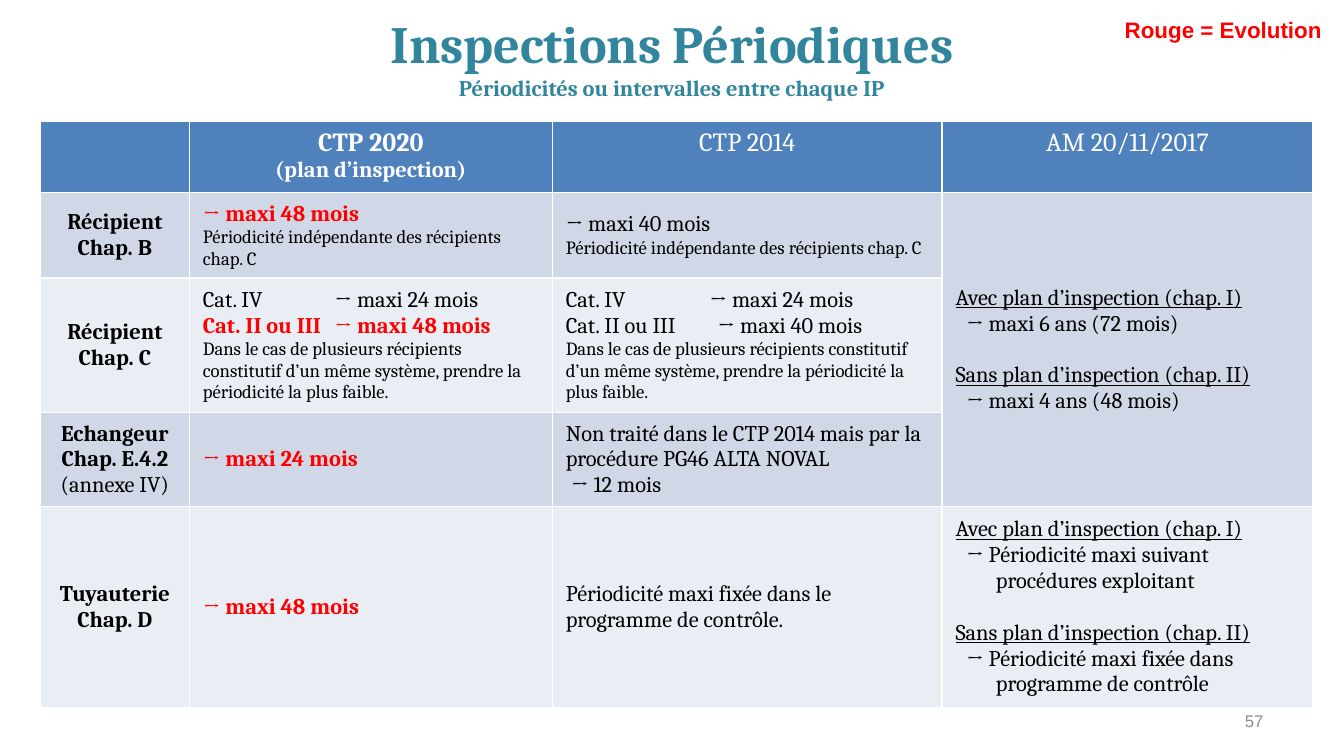
import pptx
import pptx.util
import pptx.dml.color
import pptx.enum.text
import pptx.oxml
import pptx.oxml.ns

Inches, Pt = pptx.util.Inches, pptx.util.Pt
ALIGN = pptx.enum.text.PP_ALIGN
ANCHOR = pptx.enum.text.MSO_ANCHOR

COLORS = {"teal": "31859C", "red": "FF0000", "black": "000000", "white": "FFFFFF",
          "gray": "8C8C8C", "header": "4F81BD", "dark band": "D0D8E8", "light band": "E9EDF4"}

# Each style: font values, colour, and optional paragraph values.
STYLES = {
    "title": dict(size=28, bold=True, color="teal"),
    "subtitle": dict(size=12, bold=True, color="teal"),
    "legend": dict(size=12, bold=True, color="red", name="Arial"),
    "number": dict(size=9, color="gray", name="Arial", align=ALIGN.RIGHT),
    "head": dict(size=14, color="white", align=ALIGN.CENTER),
    "head bold": dict(size=14, bold=True, color="white", align=ALIGN.CENTER),
    "head small": dict(size=12, bold=True, color="white", align=ALIGN.CENTER),
    "label": dict(size=12, bold=True, align=ALIGN.CENTER),
    "label plain": dict(size=12, align=ALIGN.CENTER),
    "body": dict(size=12),
    "small": dict(size=10),
    "change": dict(size=12, bold=True, color="red"),
    "tab 2020": dict(size=12, tab=0.98),
    "tab 2020 change": dict(size=12, bold=True, color="red", tab=0.98),
    "tab 2014": dict(size=12, tab=1.07),
    "tab 2014 wide": dict(size=12, tab=1.13),
    "case": dict(size=12, underline=True),
    "next case": dict(size=12, underline=True, before=14),
    "slight indent": dict(size=12, margin=0.04),
    "detail": dict(size=12, margin=0.3, indent=-0.22),
}

SYSTEM_RULE = ("Dans le cas de plusieurs récipients constitutif d’un même système, "
               "prendre la périodicité la plus faible.", "small")
INDEPENDENT = ("Périodicité indépendante des récipients chap. C", "small")


def plan_cases(with_plan, without_plan):
    return [("Avec plan d’inspection (chap. I)", "case"), ("→ " + with_plan, "detail"),
            ("Sans plan d’inspection (chap. II)", "next case"), ("→ " + without_plan, "detail")]


TITLE = [("Inspections Périodiques", "title"),
         ("Périodicités ou intervalles entre chaque IP", "subtitle")]
ROWS = [
    [[],
     [("CTP 2020", "head bold"), ("(plan d’inspection)", "head small")],
     [("CTP 2014", "head")],
     [("AM 20/11/2017", "head")]],
    [[("Récipient", "label"), ("Chap. B", "label")],
     [("→ maxi 48 mois", "change"), INDEPENDENT],
     [("→ maxi 40 mois", "body"), INDEPENDENT],
     plan_cases("maxi 6 ans (72 mois)", "maxi 4 ans (48 mois)")],
    [[("Récipient", "label"), ("Chap. C", "label")],
     [("Cat. IV\t→ maxi 24 mois", "tab 2020"),
      ("Cat. II ou III\t→ maxi 48 mois", "tab 2020 change"), SYSTEM_RULE],
     [("Cat. IV\t→ maxi 24 mois", "tab 2014"),
      ("Cat. II ou III\t→ maxi 40 mois", "tab 2014 wide"), SYSTEM_RULE],
     []],
    [[("Echangeur", "label"), ("Chap. E.4.2", "label"), ("(annexe IV)", "label plain")],
     [("→ maxi 24 mois", "change")],
     [("Non traité dans le CTP 2014 mais par la procédure PG46 ALTA NOVAL", "body"),
      ("→ 12 mois", "slight indent")],
     []],
    [[("Tuyauterie", "label"), ("Chap. D", "label")],
     [("→ maxi 48 mois", "change")],
     [("Périodicité maxi fixée dans le programme de contrôle.", "body")],
     plan_cases("Périodicité maxi suivant procédures exploitant",
                "Périodicité maxi fixée dans programme de contrôle")],
]
COLUMN_WIDTHS = [1.11, 2.7, 2.9, 2.76]
ROW_HEIGHTS = [0.51, 0.61, 0.97, 0.67, 1.44]


def rgb(name):
    return pptx.dml.color.RGBColor.from_string(COLORS[name])


def format_font(font, style):
    values = {"name": style.get("name", "Cambria"), "size": Pt(style["size"]),
              "bold": style.get("bold", False), "underline": style.get("underline", False)}
    for key, value in values.items():
        setattr(font, key, value)
    font.color.rgb = rgb(style.get("color", "black"))


def write_lines(frame, lines):
    for index, (text, style_name) in enumerate(lines):
        style = STYLES[style_name]
        paragraph = frame.add_paragraph() if index else frame.paragraphs[0]
        paragraph.alignment = style.get("align", ALIGN.LEFT)
        if "before" in style:
            paragraph.space_before = Pt(style["before"])
        properties = paragraph._p.get_or_add_pPr()
        if "margin" in style:
            properties.set("marL", str(Inches(style["margin"])))
            properties.set("indent", str(Inches(style.get("indent", 0))))
        if "tab" in style:
            properties.append(pptx.oxml.parse_xml(
                f'<a:tabLst {pptx.oxml.ns.nsdecls("a")}>'
                f'<a:tab pos="{Inches(style["tab"])}" algn="l"/></a:tabLst>'))
        run = paragraph.add_run()
        run.text = text
        format_font(run.font, style)


def add_title(slide):
    title = slide.shapes.title
    title.left, title.top, title.width, title.height = map(Inches, (0.5, 0.04, 9, 0.76))
    frame = title.text_frame
    frame.auto_size = pptx.enum.text.MSO_AUTO_SIZE.NONE
    frame.vertical_anchor = ANCHOR.MIDDLE
    paragraph = frame.paragraphs[0]
    paragraph.alignment = ALIGN.CENTER
    for index, (text, style_name) in enumerate(TITLE):
        if index:
            paragraph.add_line_break()
        run = paragraph.add_run()
        run.text = text
        format_font(run.font, STYLES[style_name])


def add_text(slide, box, anchor, line):
    frame = slide.shapes.add_textbox(*map(Inches, box)).text_frame
    frame.word_wrap = True
    frame.vertical_anchor = anchor
    write_lines(frame, [line])


def add_inspection_table(slide):
    """Add the table; its white grid lines come from the default table style."""
    table = slide.shapes.add_table(
        len(ROWS), len(COLUMN_WIDTHS), Inches(0.3), Inches(0.9),
        Inches(sum(COLUMN_WIDTHS)), Inches(sum(ROW_HEIGHTS))).table
    for column, width in zip(table.columns, COLUMN_WIDTHS):
        column.width = Inches(width)
    for row, height in zip(table.rows, ROW_HEIGHTS):
        row.height = Inches(height)
    table.cell(1, 3).merge(table.cell(3, 3))
    for row_index, row in enumerate(ROWS):
        band = "dark band" if row_index % 2 else "light band"
        for column_index, lines in enumerate(row):
            cell = table.cell(row_index, column_index)
            cell.fill.solid()
            cell.fill.fore_color.rgb = rgb(band if row_index else "header")
            cell.vertical_anchor = ANCHOR.MIDDLE if row_index else ANCHOR.TOP
            write_lines(cell.text_frame, lines)


def main():
    presentation = pptx.Presentation()
    presentation.slide_width = Inches(10)
    presentation.slide_height = Inches(10 * 9 / 16)
    slide = presentation.slides.add_slide(presentation.slide_layouts[5])
    add_title(slide)
    add_text(slide, (7.17, 5.21, 2.33, 0.3), ANCHOR.MIDDLE, ("57", "number"))
    add_inspection_table(slide)
    add_text(slide, (8.27, 0.07, 1.73, 0.3), ANCHOR.TOP, ("Rouge = Evolution", "legend"))
    presentation.save("out.pptx")


if __name__ == "__main__":
    main()
